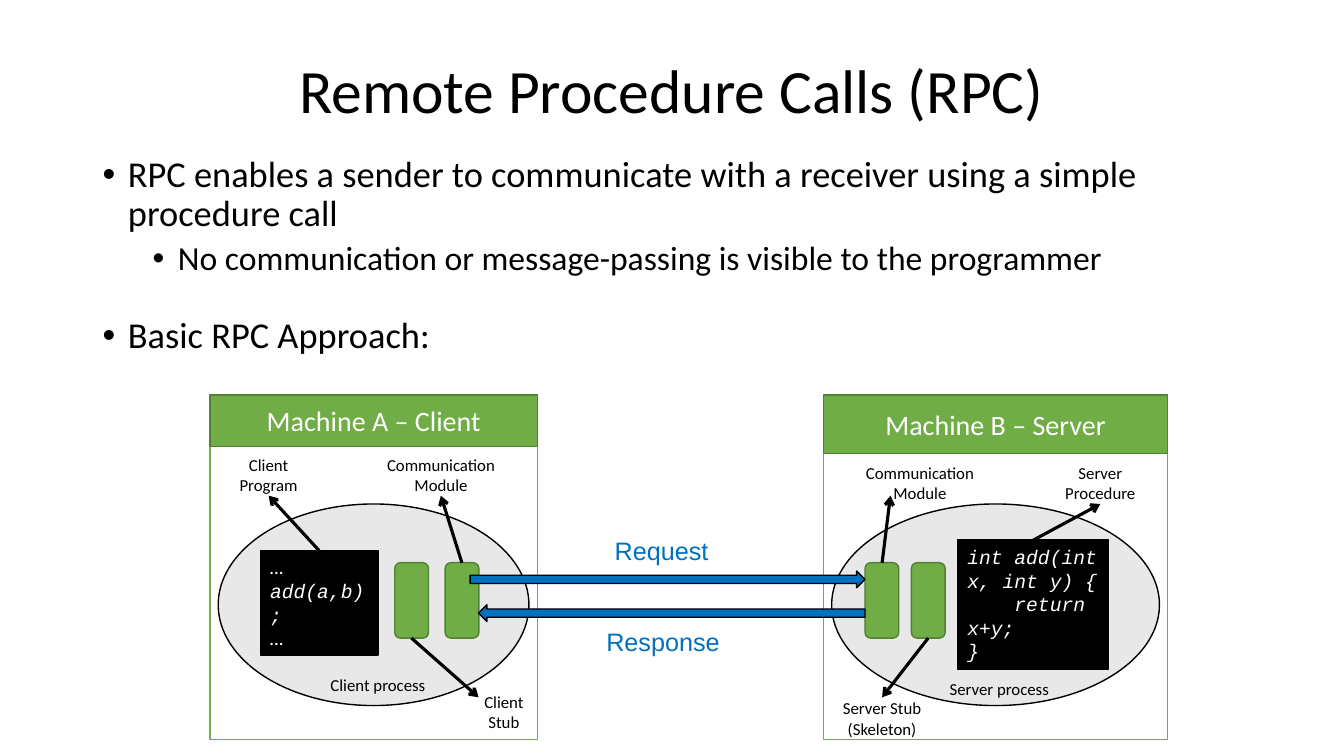
from dataclasses import dataclass

from lxml.etree import SubElement
from pptx import Presentation
from pptx.dml.color import RGBColor
from pptx.enum.shapes import MSO_CONNECTOR, MSO_SHAPE
from pptx.enum.text import MSO_ANCHOR, MSO_AUTO_SIZE, PP_ALIGN
from pptx.oxml.ns import qn
from pptx.shapes.autoshape import Shape
from pptx.slide import Slide
from pptx.text.text import TextFrame, _Paragraph
from pptx.util import Cm, Pt

BLACK = RGBColor(0x00, 0x00, 0x00)
WHITE = RGBColor(0xFF, 0xFF, 0xFF)
GREEN = RGBColor(0x70, 0xAD, 0x47)
DARK_GREEN = RGBColor(0x53, 0x80, 0x35)
GREY = RGBColor(0x8C, 0x8C, 0x8C)
BLUE = RGBColor(0x00, 0x70, 0xC0)
SANS, MONO, MESSAGE_FONT = "Calibri", "Courier New", "Arial"


@dataclass(frozen=True)
class Box:
    left: float
    top: float
    width: float
    height: float

    def lengths(self) -> tuple[Cm, Cm, Cm, Cm]:
        return Cm(self.left), Cm(self.top), Cm(self.width), Cm(self.height)


@dataclass(frozen=True)
class Machine:
    name: str
    frame: Box
    header_height: float
    process: Box
    code_box: Box
    code: tuple[tuple[str, str], ...]
    module_lefts: tuple[float, float]


@dataclass(frozen=True)
class Message:
    name: str
    arrow: Box
    rotation: int
    caption: Box


@dataclass(frozen=True)
class Label:
    text: str
    box: Box


@dataclass(frozen=True)
class Pointer:
    start: tuple[float, float]
    end: tuple[float, float]


@dataclass(frozen=True)
class Bullet:
    text: str
    level: int
    size: int
    indent: float
    space_before: int


MACHINES = (
    Machine("Machine B – Server", Box(20.75, 9.95, 8.68, 8.68), 1.48,
            Box(20.96, 12.7, 8.26, 5.08), Box(24.13, 13.61, 3.81, 3.25),
            (("int add(int x, int y) {", MONO), ("    return x+y;", MONO), ("}", MONO)),
            (21.8, 22.97)),
    Machine("Machine A – Client", Box(5.29, 9.95, 8.26, 8.68), 1.3,
            Box(5.5, 12.7, 7.83, 5.08), Box(6.56, 13.87, 2.97, 2.64),
            (("…", SANS), ("add(a,b);", MONO), ("…", SANS)),
            (9.95, 11.22)),
)
MESSAGES = (
    Message("Request", Box(11.85, 14.39, 9.95, 0.42), 0, Box(15.24, 13.36, 2.96, 1.02)),
    Message("Response", Box(12.06, 15.24, 9.74, 0.42), 180, Box(15.03, 15.67, 3.39, 1.02)),
)
LABELS = (
    Label("Client Program", Box(5.5, 11.43, 2.54, 1.06)),
    Label("Communication Module", Box(8.89, 11.43, 4.45, 1.06)),
    Label("Client Stub", Box(11.64, 17.4, 2.12, 1.06)),
    Label("Client process", Box(7.62, 16.72, 3.81, 1.06)),
    Label("Communication Module", Box(20.96, 11.64, 4.45, 1.06)),
    Label("Server Procedure", Box(26.46, 11.64, 2.54, 1.06)),
    Label("Server Stub (Skeleton)", Box(20.75, 17.57, 2.96, 1.06)),
    Label("Server process", Box(23.28, 16.93, 3.81, 0.85)),
)
POINTERS = (
    Pointer((8.04, 13.87), (6.77, 12.49)),
    Pointer((11.64, 14.18), (11.11, 12.49)),
    Pointer((10.37, 16.08), (12.06, 17.57)),
    Pointer((22.23, 14.18), (22.44, 12.49)),
    Pointer((26.04, 13.61), (27.73, 12.7)),
    Pointer((23.39, 16.08), (22.23, 17.57)),
)
BULLETS = (
    Bullet("RPC enables a sender to communicate with a receiver using a simple procedure call",
           0, 26, 0.64, 0),
    Bullet("No communication or message-passing is visible to the programmer", 1, 24, 1.9, 5),
    Bullet("Basic RPC Approach:", 0, 26, 0.64, 28),
)


def add_text(paragraph: _Paragraph, text: str, size: int, color: RGBColor = BLACK,
             font: str = SANS, italic: bool = False) -> None:
    run = paragraph.add_run()
    run.text = text
    run.font.name, run.font.size = font, Pt(size)
    run.font.color.rgb, run.font.italic = color, italic


def prepare_frame(frame: TextFrame, anchor: MSO_ANCHOR) -> None:
    frame.word_wrap = True
    frame.auto_size = MSO_AUTO_SIZE.NONE
    frame.vertical_anchor = anchor


def draw_shape(slide: Slide, kind: MSO_SHAPE, box: Box, fill: RGBColor, line: RGBColor) -> Shape:
    shape = slide.shapes.add_shape(kind, *box.lengths())
    shape.shadow.inherit = False
    shape.fill.solid()
    shape.fill.fore_color.rgb = fill
    shape.line.color.rgb = line
    shape.line.width = Pt(1)
    return shape


def draw_caption(slide: Slide, text: str, box: Box, size: int, color: RGBColor, font: str,
                 anchor: MSO_ANCHOR, align: PP_ALIGN) -> None:
    frame = slide.shapes.add_textbox(*box.lengths()).text_frame
    prepare_frame(frame, anchor)
    frame.paragraphs[0].alignment = align
    add_text(frame.paragraphs[0], text, size, color, font)


def draw_machine(slide: Slide, machine: Machine) -> None:
    frame = machine.frame
    draw_shape(slide, MSO_SHAPE.RECTANGLE, frame, WHITE, GREEN)
    header_box = Box(frame.left, frame.top, frame.width, machine.header_height)
    header = draw_shape(slide, MSO_SHAPE.RECTANGLE, header_box, GREEN, DARK_GREEN)
    prepare_frame(header.text_frame, MSO_ANCHOR.MIDDLE)
    header.text_frame.paragraphs[0].alignment = PP_ALIGN.CENTER
    add_text(header.text_frame.paragraphs[0], machine.name, 20, WHITE)

    process = draw_shape(slide, MSO_SHAPE.OVAL, machine.process, GREY, BLACK)
    fill_color = process._element.spPr.find(qn("a:solidFill"))[0]
    SubElement(fill_color, qn("a:alpha"), val="20000")

    code = draw_shape(slide, MSO_SHAPE.RECTANGLE, machine.code_box, BLACK, BLACK).text_frame
    prepare_frame(code, MSO_ANCHOR.TOP)
    for index, (text, font) in enumerate(machine.code):
        paragraph = code.add_paragraph() if index else code.paragraphs[0]
        paragraph.alignment = PP_ALIGN.LEFT
        add_text(paragraph, text, 14, WHITE, font, italic=True)

    for left in machine.module_lefts:
        draw_shape(slide, MSO_SHAPE.FLOWCHART_ALTERNATE_PROCESS,
                   Box(left, 14.18, 0.85, 1.9), GREEN, DARK_GREEN)


def draw_message(slide: Slide, message: Message) -> None:
    arrow = draw_shape(slide, MSO_SHAPE.RIGHT_ARROW, message.arrow, BLUE, BLACK)
    arrow.rotation = message.rotation
    draw_caption(slide, message.name, message.caption, 18, BLUE, MESSAGE_FONT,
                 MSO_ANCHOR.TOP, PP_ALIGN.LEFT)


def draw_pointer(slide: Slide, pointer: Pointer) -> None:
    ends = [Cm(value) for value in pointer.start + pointer.end]
    connector = slide.shapes.add_connector(MSO_CONNECTOR.STRAIGHT, *ends)
    connector.line.color.rgb = BLACK
    connector.line.width = Pt(2.25)
    SubElement(connector.line._get_or_add_ln(), qn("a:tailEnd"), type="arrow")
    SubElement(connector._element.spPr, qn("a:effectLst"))


def fill_placeholder(holder: Shape, box: Box, anchor: MSO_ANCHOR) -> TextFrame:
    holder.left, holder.top, holder.width, holder.height = box.lengths()
    prepare_frame(holder.text_frame, anchor)
    return holder.text_frame


def write_bullet(paragraph: _Paragraph, bullet: Bullet) -> None:
    paragraph.level = bullet.level
    paragraph.line_spacing = 0.9
    paragraph.space_before = Pt(bullet.space_before)
    properties = paragraph._p.get_or_add_pPr()
    properties.set("marL", str(Cm(bullet.indent)))
    properties.set("indent", str(-Cm(0.64)))
    SubElement(properties, qn("a:buFont"), typeface="Arial")
    SubElement(properties, qn("a:buChar"), char="•")
    add_text(paragraph, bullet.text, bullet.size)


def main() -> None:
    deck = Presentation()
    deck.slide_width, deck.slide_height = Cm(33.87), Cm(19.05)
    slide = deck.slides.add_slide(deck.slide_layouts[1])

    title = fill_placeholder(slide.shapes.title, Box(5.5, 0.89, 22.86, 2.92), MSO_ANCHOR.MIDDLE)
    title.paragraphs[0].alignment = PP_ALIGN.CENTER
    title.paragraphs[0].line_spacing = 0.9
    add_text(title.paragraphs[0], "Remote Procedure Calls (RPC)", 44)

    body = fill_placeholder(slide.placeholders[1], Box(2.33, 3.81, 28.35, 5.72), MSO_ANCHOR.TOP)
    for index, bullet in enumerate(BULLETS):
        write_bullet(body.add_paragraph() if index else body.paragraphs[0], bullet)

    for machine in MACHINES:
        draw_machine(slide, machine)
    for message in MESSAGES:
        draw_message(slide, message)
    for label in LABELS:
        draw_caption(slide, label.text, label.box, 12, BLACK, SANS,
                     MSO_ANCHOR.MIDDLE, PP_ALIGN.CENTER)
    for pointer in POINTERS:
        draw_pointer(slide, pointer)

    deck.save("out.pptx")


if __name__ == "__main__":
    main()
